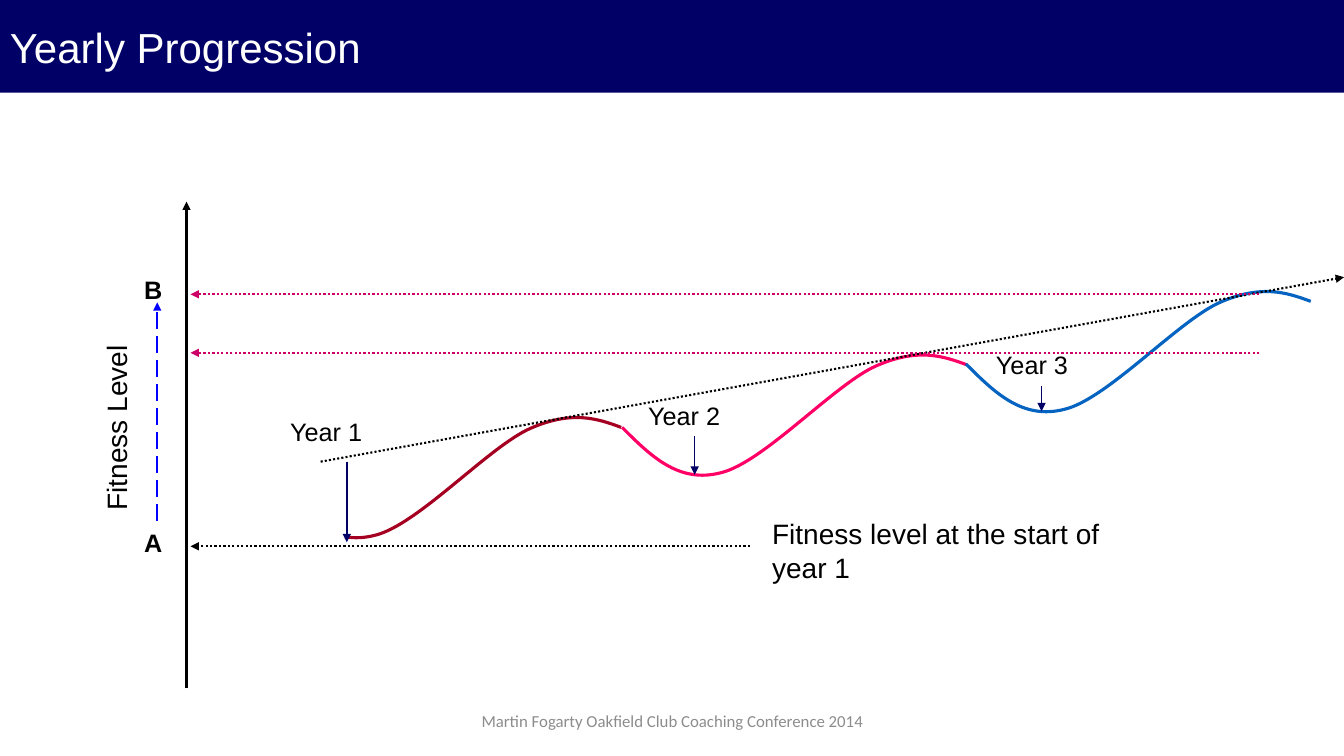
from dataclasses import dataclass

from lxml import etree
from pptx import Presentation
from pptx.dml.color import RGBColor
from pptx.enum.dml import MSO_LINE
from pptx.enum.shapes import MSO_CONNECTOR, MSO_SHAPE
from pptx.enum.text import MSO_ANCHOR, PP_ALIGN
from pptx.oxml.ns import qn
from pptx.util import Inches, Pt

LEFT, CENTER = PP_ALIGN.LEFT, PP_ALIGN.CENTER
TOP, MIDDLE = MSO_ANCHOR.TOP, MSO_ANCHOR.MIDDLE
DOTTED, LONG_DASH = MSO_LINE.ROUND_DOT, MSO_LINE.LONG_DASH
RECTANGLE, STRAIGHT = MSO_SHAPE.RECTANGLE, MSO_CONNECTOR.STRAIGHT


@dataclass(frozen=True)
class Theme:
    navy: str = "000066"
    white: str = "FFFFFF"
    black: str = "000000"
    grey: str = "8C8C8C"
    magenta: str = "CC0066"
    blue: str = "0000FF"
    year_1: str = "A50021"
    year_2: str = "FF0066"
    year_3: str = "0563C1"
    font: str = "Arial"
    footer_font: str = "Calibri"
    title_size: int = 30
    caption_size: int = 20
    label_size: int = 18
    footer_size: int = 12


THEME = Theme()
SLIDE_WIDTH, SLIDE_HEIGHT = 13.33, 7.5

TITLE = "Yearly Progression"
TITLE_BAR = (0, 0, SLIDE_WIDTH, 0.92)
FOOTER = "Martin Fogarty Oakfield Club Coaching Conference 2014"
FOOTER_BOX = (4.42, 6.95, 4.5, 0.4)
AXIS_TITLE = "Fitness Level"
AXIS_TITLE_BOX = (0.07, 3.86, 2.17, 0.44)
START_NOTE = "Fitness level at the start of year 1"
START_NOTE_BOX = (7.56, 5.08, 3.56, 0.77)

# Bezier points of one training year, measured from where the year starts
YEAR_WAVE = [
    (0.28, 0.28), (0.56, 0.56), (0.98, 0.45),
    (1.4, 0.35), (2.11, -0.43), (2.52, -0.61),
    (2.93, -0.79), (3.18, -0.71), (3.42, -0.62),
]
YEAR_STARTS = [
    ((2.74, 4.86), THEME.year_1),
    ((6.17, 4.24), THEME.year_2),
    ((9.58, 3.61), THEME.year_3),
]
YEAR_1_LEAD_IN = (2.33, 4.75, 1.11, 0.58)  # hides the dip before year 1

# text, left, top, width, bold
LABEL_HEIGHT = 0.4
LABELS = [
    ("Year 1", 2.78, 4.08, 0.92, False),
    ("Year 2", 6.33, 3.92, 0.92, False),
    ("Year 3", 9.78, 3.42, 0.92, False),
    ("A", 1.33, 5.18, 0.38, True),
    ("B", 1.33, 2.67, 0.38, True),
]

# start, tip, colour, width, dash
ARROWS = [
    ((1.85, 6.83), (1.85, 2), THEME.black, 1.5, None),
    ((3.18, 4.58), (13.33, 2.75), THEME.black, 1.5, DOTTED),
    ((12.49, 2.92), (1.89, 2.92), THEME.magenta, 1.6, DOTTED),
    ((12.49, 3.5), (1.89, 3.5), THEME.magenta, 1.6, DOTTED),
    ((7.44, 5.42), (1.89, 5.42), THEME.black, 1.6, DOTTED),
    ((1.56, 5.17), (1.56, 3), THEME.blue, 1.55, LONG_DASH),
    ((3.44, 4.58), (3.44, 5.38), THEME.navy, 1, None),
    ((6.89, 4.33), (6.89, 4.71), THEME.navy, 1, None),
    ((10.33, 3.83), (10.33, 4.08), THEME.navy, 1, None),
]


def rgb(colour):
    return RGBColor.from_string(colour)


def inches(lengths):
    return [Inches(length) for length in lengths]


def write(shape, text, *, size=THEME.label_size, font=THEME.font, colour=THEME.black,
          bold=False, align=LEFT, anchor=TOP, wrap=True):
    frame = shape.text_frame
    frame.word_wrap = wrap
    frame.vertical_anchor = anchor
    paragraph = frame.paragraphs[0]
    paragraph.alignment = align
    run = paragraph.add_run()
    run.text = text
    run.font.size = Pt(size)
    run.font.name = font
    run.font.bold = bold
    run.font.color.rgb = rgb(colour)


def add_text(slide, box, text, **text_format):
    shape = slide.shapes.add_textbox(*inches(box))
    write(shape, text, **text_format)
    return shape


def set_line(shape, colour, width):
    shape.line.color.rgb = rgb(colour)
    shape.line.width = Pt(width)


def add_block(slide, box, colour):
    block = slide.shapes.add_shape(RECTANGLE, *inches(box))
    block.shadow.inherit = False
    block.fill.solid()
    block.fill.fore_color.rgb = rgb(colour)
    block.line.fill.background()
    return block


def add_arrow(slide, start, tip, colour, width, dash):
    arrow = slide.shapes.add_connector(STRAIGHT, *inches(start + tip))
    set_line(arrow, colour, width)
    if dash is not None:
        arrow.line.dash_style = dash
    properties = arrow._element.spPr
    etree.SubElement(properties.find(qn("a:ln")), qn("a:tailEnd"), type="triangle")
    etree.SubElement(properties, qn("a:effectLst"))


def bend(outline):
    """Turn every three straight segments of a freeform into one Bezier curve."""
    segments = list(outline._element.iter(qn("a:lnTo")))
    for first in range(0, len(segments), 3):
        curve = etree.Element(qn("a:cubicBezTo"))
        segments[first].addprevious(curve)
        for segment in segments[first:first + 3]:
            curve.append(segment[0])
            segment.getparent().remove(segment)


def add_year(slide, start, colour):
    left, top = start
    builder = slide.shapes.build_freeform(Inches(left), Inches(top))
    builder.add_line_segments(
        [(Inches(left + dx), Inches(top + dy)) for dx, dy in YEAR_WAVE], close=False)
    wave = builder.convert_to_shape()
    bend(wave)
    wave.shadow.inherit = False
    wave.fill.background()
    set_line(wave, colour, 2.25)


def main():
    deck = Presentation()
    deck.slide_width, deck.slide_height = inches((SLIDE_WIDTH, SLIDE_HEIGHT))
    slide = deck.slides.add_slide(deck.slide_layouts[6])

    title_bar = add_block(slide, TITLE_BAR, THEME.navy)
    write(title_bar, TITLE, size=THEME.title_size, colour=THEME.white, anchor=MIDDLE)

    for start, colour in YEAR_STARTS:
        add_year(slide, start, colour)
    lead_in = add_block(slide, YEAR_1_LEAD_IN, THEME.white)
    set_line(lead_in, THEME.white, 0.75)
    for arrow in ARROWS:
        add_arrow(slide, *arrow)

    for text, left, top, width, bold in LABELS:
        add_text(slide, (left, top, width, LABEL_HEIGHT), text, bold=bold, wrap=False)
    add_text(slide, START_NOTE_BOX, START_NOTE, size=THEME.caption_size)
    axis_title = add_text(slide, AXIS_TITLE_BOX, AXIS_TITLE, size=THEME.caption_size)
    axis_title.rotation = 270
    add_text(slide, FOOTER_BOX, FOOTER, size=THEME.footer_size, font=THEME.footer_font,
             colour=THEME.grey, align=CENTER, anchor=MIDDLE)

    deck.save("out.pptx")


if __name__ == "__main__":
    main()
